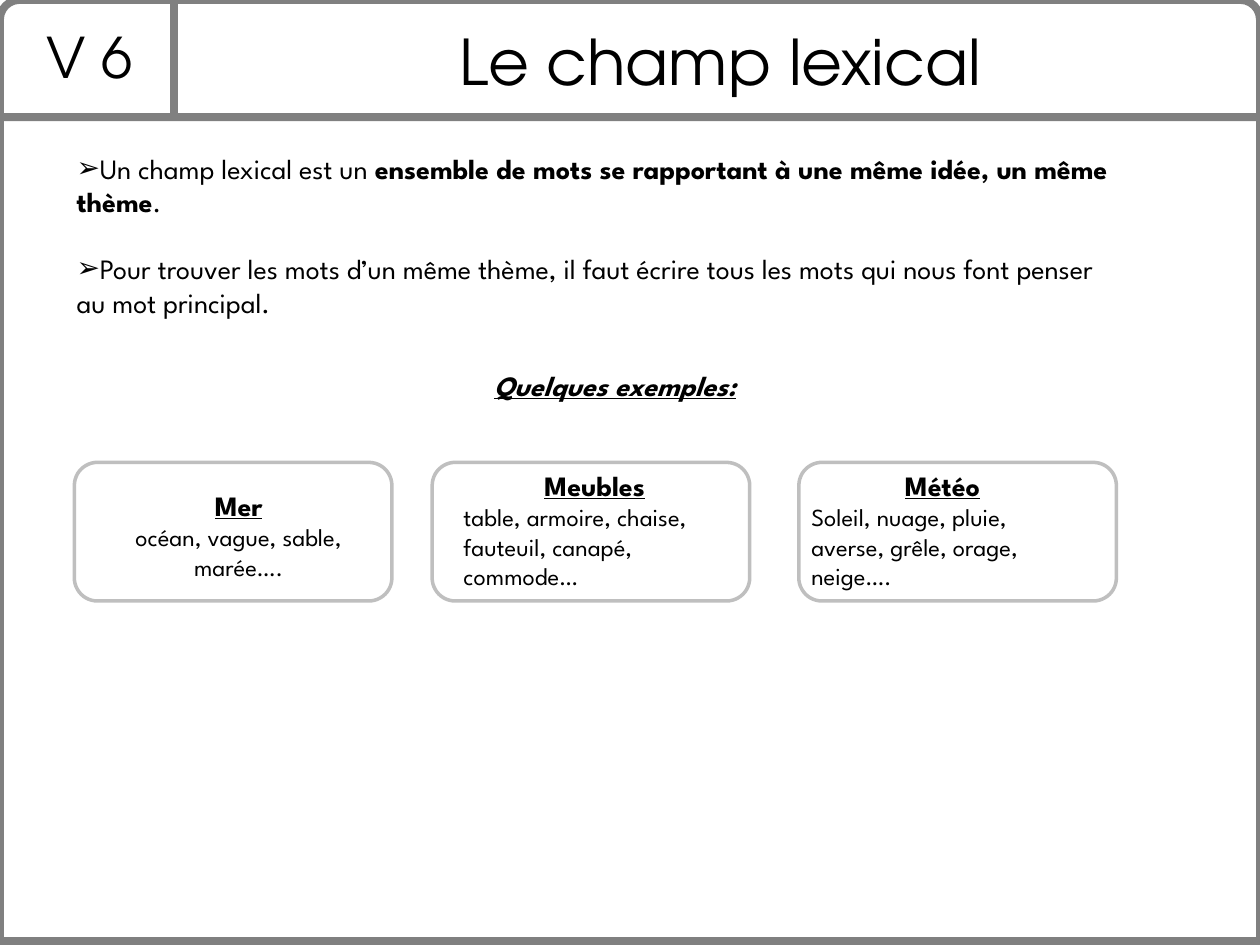
from lxml import etree
from pptx import Presentation
from pptx.dml.color import RGBColor
from pptx.enum import shapes, text
from pptx.oxml import ns
from pptx.util import Inches, Pt

COLORS = {"frame": "808080", "card": "BFBFBF", "paper": "FFFFFF", "ink": "000000"}
HEADING_FONT = "TeX Gyre Adventor"
BODY_FONT = "League Spartan"
CENTER = text.PP_ALIGN.CENTER
LEFT = text.PP_ALIGN.LEFT


def color(name):
    return RGBColor.from_string(COLORS[name])


def add_span(para, words, size, font=BODY_FONT, bold=False, italic=False, underline=False):
    span = para.add_run()
    span.text = words
    span.font.name = font
    span.font.size = Pt(size)
    span.font.bold = bold
    span.font.italic = italic
    span.font.underline = underline
    span.font.color.rgb = color("ink")


def prepare_frame(box):
    frame = box.text_frame
    frame.word_wrap = True
    frame.auto_size = text.MSO_AUTO_SIZE.NONE
    frame.vertical_anchor = text.MSO_ANCHOR.TOP
    return frame


def add_text_box(page, left, top, width, height):
    return prepare_frame(page.shapes.add_textbox(
        Inches(left), Inches(top), Inches(width), Inches(height)))


def add_outline(page, kind, left, top, width, height, line, weight, fill=None):
    shape = page.shapes.add_shape(
        kind, Inches(left), Inches(top), Inches(width), Inches(height))
    shape.shadow.inherit = False
    if fill:
        shape.fill.solid()
        shape.fill.fore_color.rgb = color(fill)
    else:
        shape.fill.background()
    shape.line.color.rgb = color(line)
    shape.line.width = Pt(weight)


def add_page_frame(page, width, header_height, body_height, divider):
    kinds = shapes.MSO_SHAPE
    add_outline(page, kinds.ROUND_2_SAME_RECTANGLE, 0, 0, width, header_height, "frame", 4.5)
    add_outline(page, kinds.RECTANGLE, 0, header_height, width, body_height, "frame", 4.5)
    rule = page.shapes.add_connector(
        shapes.MSO_CONNECTOR.STRAIGHT,
        Inches(divider), Inches(0), Inches(divider), Inches(header_height))
    rule.line.color.rgb = color("frame")
    rule.line.width = Pt(4.5)
    etree.SubElement(rule._element.spPr, ns.qn("a:effectLst"))


def add_header(page, top):
    # Lesson number
    para = add_text_box(page, 0.12, top, 1.18, 0.64).paragraphs[0]
    para.alignment = CENTER
    add_span(para, "V 6", 32, HEADING_FONT)

    # Lesson title
    title = page.shapes.title
    title.left, title.top = Inches(1.54), Inches(top)
    title.width, title.height = Inches(8.35), Inches(0.71)
    para = prepare_frame(title).paragraphs[0]
    para.alignment = CENTER
    add_span(para, "Le champ lexical", 36, HEADING_FONT)


def add_definitions(page, left, top, width, height):
    definitions = [
        [("Un champ lexical est un ", False),
         ("ensemble de mots se rapportant à une même idée, un même thème", True),
         (".", False)],
        [("Pour trouver les mots d’un même thème, il faut écrire tous les mots "
          "qui nous font penser au mot principal.", False)],
    ]
    frame = add_text_box(page, left, top, width, height)
    for index, spans in enumerate(definitions):
        para = frame.add_paragraph() if index else frame.paragraphs[0]
        if index:
            para.space_before = Pt(19)
        properties = para._p.get_or_add_pPr()
        properties.set("marL", "0")
        properties.set("indent", "0")
        etree.SubElement(properties, ns.qn("a:buFont"), typeface="Arial")
        etree.SubElement(properties, ns.qn("a:buChar"), char="➢")
        for words, bold in spans:
            add_span(para, words, 16, bold=bold)


def add_examples_heading(page, left, top, width, height):
    para = add_text_box(page, left, top, width, height).paragraphs[0]
    para.alignment = CENTER
    add_span(para, "Quelques exemples:", 16, bold=True, italic=True, underline=True)


def add_example_card(page, left, top, theme, words, alignment, text_box):
    add_outline(page, shapes.MSO_SHAPE.ROUNDED_RECTANGLE,
                left, top, 2.52, 1.1, "card", 2, "paper")
    offset_x, offset_y, width, height = text_box
    frame = add_text_box(page, left + offset_x, top + offset_y, width, height)
    para = frame.paragraphs[0]
    para.alignment = CENTER
    add_span(para, theme, 16, bold=True, underline=True)
    para = frame.add_paragraph()
    para.alignment = alignment
    add_span(para, words, 14)


def main():
    deck = Presentation()
    deck.slide_width, deck.slide_height = Inches(10), Inches(7.5)
    page = deck.slides.add_slide(deck.slide_layouts[5])

    add_page_frame(page, 10, 0.93, 6.54, 1.38)
    add_header(page, 0.13)
    add_definitions(page, 0.51, 1.15, 8.5, 1.45)
    add_examples_heading(page, 1.61, 2.88, 6.54, 0.37)

    # Example cards: left edge, theme, words, alignment, text box within the card
    cards = [
        (0.59, "Mer", "océan, vague, sable, marée….", CENTER, (0.24, 0.16, 2.13, 0.84)),
        (3.43, "Meubles", "table, armoire, chaise, fauteuil, canapé, commode…",
         LEFT, (0.15, 0, 2.28, 1.08)),
        (6.34, "Météo", "Soleil, nuage, pluie, averse, grêle, orage, neige….",
         LEFT, (0, 0, 2.28, 1.08)),
    ]
    for left, theme, words, alignment, text_box in cards:
        add_example_card(page, left, 3.67, theme, words, alignment, text_box)

    deck.save("out.pptx")


if __name__ == "__main__":
    main()
